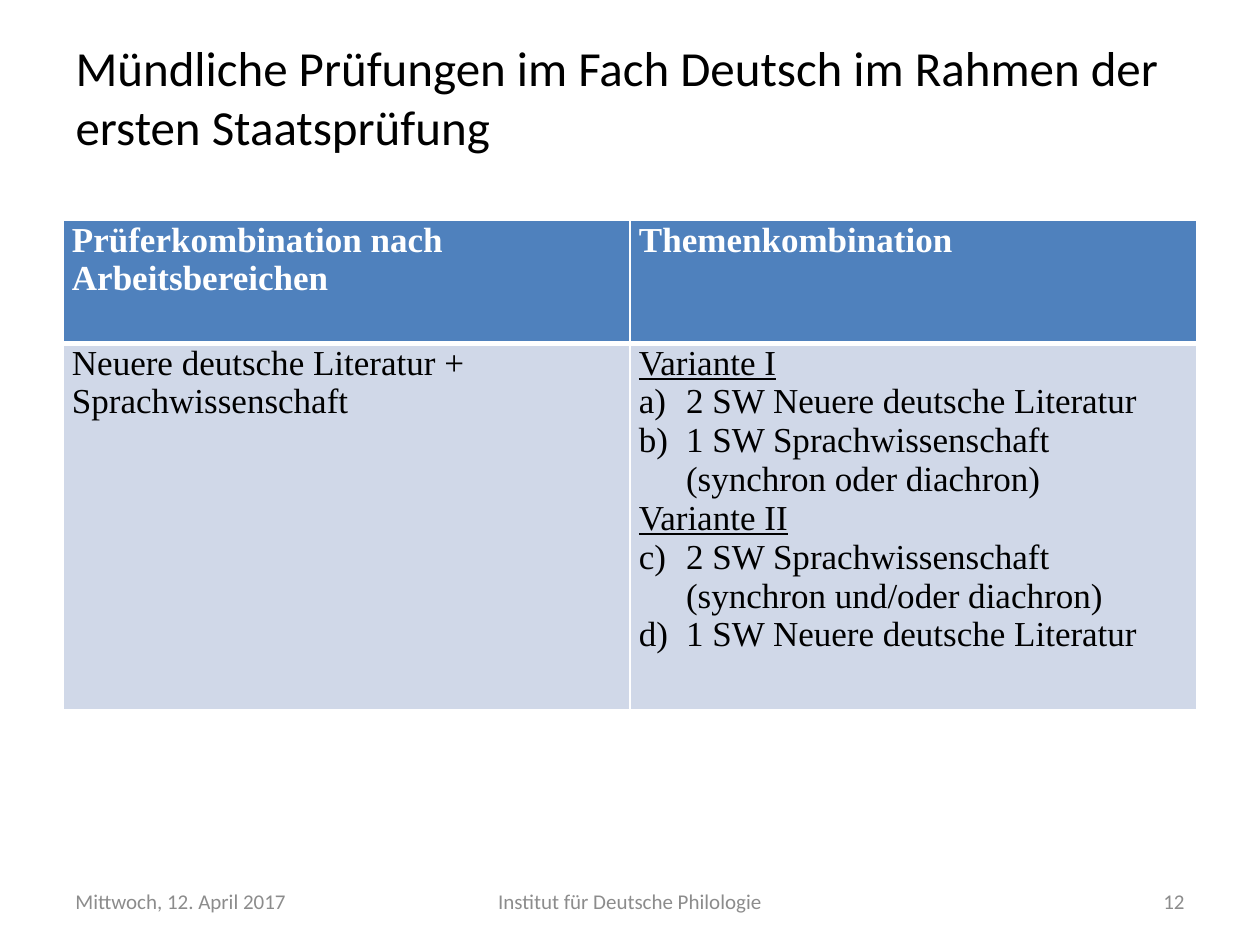
from lxml.etree import SubElement
from pptx import Presentation
from pptx.dml.color import RGBColor
from pptx.enum.text import MSO_ANCHOR, MSO_AUTO_SIZE, PP_ALIGN
from pptx.oxml.ns import qn
from pptx.util import Cm, Pt

COLORS = {"text": "000000", "white": "FFFFFF", "header": "4F81BD",
          "body": "D0D8E8", "footer": "8C8C8C"}
HEADERS = ["Prüferkombination nach Arbeitsbereichen", "Themenkombination"]
EXAMINERS = "Neuere deutsche Literatur + Sprachwissenschaft"
VARIANTS = {
    "Variante I": ["2 SW Neuere deutsche Literatur",
                   "1 SW Sprachwissenschaft (synchron oder diachron)"],
    "Variante II": ["2 SW Sprachwissenschaft (synchron und/oder diachron)",
                    "1 SW Neuere deutsche Literatur"],
}
FOOTERS = [
    (1.27, 5.93, "Mittwoch, 12. April 2017", PP_ALIGN.LEFT),
    (8.68, 8.04, "Institut für Deutsche Philologie", PP_ALIGN.CENTER),
    (18.2, 5.93, "12", PP_ALIGN.RIGHT),
]


class SlideBuilder:
    heading_font = "Calibri"
    table_font = "Times New Roman"

    def __init__(self, prs):
        self.s = prs.slides.add_slide(prs.slide_layouts[5])

    def run(self, p, text, size, font, color, bold=False, underline=False):
        r = p.add_run()
        r.text = text
        f = r.font
        f.size, f.name, f.bold, f.underline = Pt(size), font, bold, underline
        f.color.rgb = RGBColor.from_string(COLORS[color])

    def title(self, text):
        sp = self.s.shapes.title
        sp.left, sp.top, sp.width, sp.height = Cm(1.27), Cm(0.76), Cm(22.86), Cm(3.18)
        tf = sp.text_frame
        tf.auto_size = MSO_AUTO_SIZE.NONE
        tf.vertical_anchor = MSO_ANCHOR.TOP
        tf.margin_top = 0
        p = tf.paragraphs[0]
        p.alignment = PP_ALIGN.LEFT
        self.run(p, text, 28, self.heading_font, "text")

    def footer(self, left, width, text, align):
        sp = self.s.shapes.add_textbox(Cm(left), Cm(17.65), Cm(width), Cm(1.02))
        tf = sp.text_frame
        tf.word_wrap = True
        tf.vertical_anchor = MSO_ANCHOR.MIDDLE
        p = tf.paragraphs[0]
        p.alignment = align
        self.run(p, text, 12, self.heading_font, "footer")

    def table(self, col_width, row_heights):
        frame = self.s.shapes.add_table(
            len(row_heights), len(HEADERS), Cm(1.27), Cm(4.45),
            Cm(col_width * len(HEADERS)), Cm(sum(row_heights)))
        table = frame.table
        for col in table.columns:
            col.width = Cm(col_width)
        for row, height in zip(table.rows, row_heights):
            row.height = Cm(height)
        return table

    def cell(self, cell, fill, top=1, bottom=1):
        """Style a cell; top and bottom are border widths in points."""
        cell.margin_left = cell.margin_right = Cm(0.18)
        cell.margin_top = cell.margin_bottom = 0
        tcPr = cell._tc.get_or_add_tcPr()
        for side, width in (("L", 1), ("R", 1), ("T", top), ("B", bottom)):
            ln = SubElement(tcPr, qn(f"a:ln{side}"), w=str(Pt(width)))
            solid = SubElement(ln, qn("a:solidFill"))
            SubElement(solid, qn("a:srgbClr"), val=COLORS["white"])
        cell.fill.solid()
        cell.fill.fore_color.rgb = RGBColor.from_string(COLORS[fill])

    def cell_text(self, p, text, color="text", **style):
        self.run(p, text, 20, self.table_font, color, **style)

    def lettered(self, p):
        pPr = p._p.get_or_add_pPr()
        pPr.set("marL", str(Cm(0.95)))
        pPr.set("indent", str(-Cm(0.95)))
        SubElement(pPr, qn("a:buAutoNum"), type="alphaLcParenR")

    def variants(self, tf):
        p = tf.paragraphs[0]
        for i, (name, topics) in enumerate(VARIANTS.items()):
            if i:
                p = tf.add_paragraph()
            self.cell_text(p, name, underline=True)
            for topic in topics:
                p = tf.add_paragraph()
                self.lettered(p)
                self.cell_text(p, topic)


def main():
    prs = Presentation()
    prs.slide_width, prs.slide_height = Cm(25.4), Cm(19.05)
    slide = SlideBuilder(prs)
    slide.title("Mündliche Prüfungen im Fach Deutsch im Rahmen der ersten Staatsprüfung")

    table = slide.table(11.43, [2.48, 7.37])
    for col, header in enumerate(HEADERS):
        slide.cell(table.cell(0, col), "header", bottom=3)
        slide.cell(table.cell(1, col), "body", top=3)
        slide.cell_text(table.cell(0, col).text_frame.paragraphs[0], header,
                        "white", bold=True)
    slide.cell_text(table.cell(1, 0).text_frame.paragraphs[0], EXAMINERS)
    slide.variants(table.cell(1, 1).text_frame)

    for footer in FOOTERS:
        slide.footer(*footer)
    prs.save("out.pptx")


if __name__ == "__main__":
    main()
